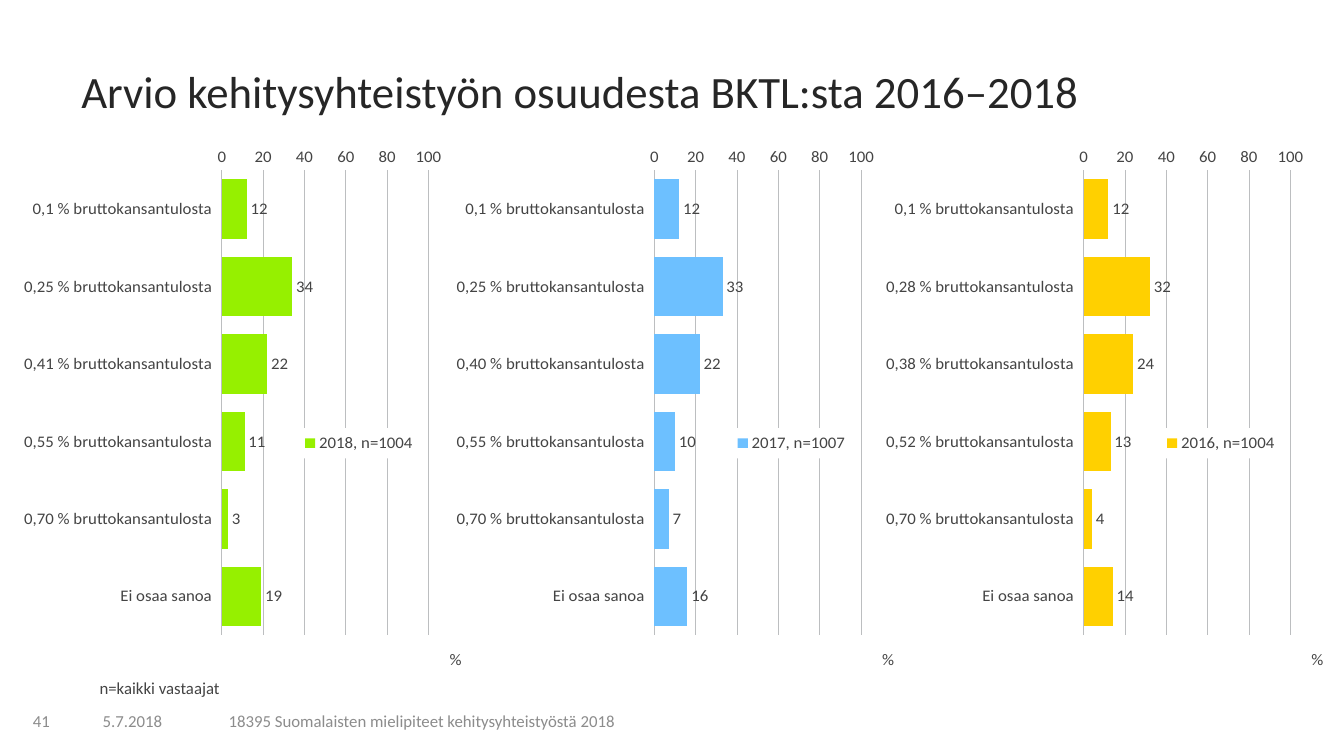
from lxml import etree
from pptx import Presentation
from pptx import util as u
from pptx.chart import data as cd
from pptx.dml import color as dc
from pptx.enum import chart as ec
from pptx.enum import text as et
from pptx.oxml import ns

FONT = "Calibri"
HUES = {
    "head": "262626", "body": "444444", "foot": "8C8C8C", "grid": "BCBEC0",
    "back": "FFFFFF", "lime": "96F000", "blue": "6DC0FF", "gold": "FFD000",
}
TAIL = " % bruttokansantulosta"
LAST = "Ei osaa sanoa"
PANELS = [
    (0.38, "2018, n=1004", "lime", ["0,1", "0,25", "0,41", "0,55", "0,70"],
     [12, 34, 22, 11, 3, 19]),
    (11.28, "2017, n=1007", "blue", ["0,1", "0,25", "0,40", "0,55", "0,70"],
     [12, 33, 22, 10, 7, 16]),
    (22.1, "2016, n=1004", "gold", ["0,1", "0,28", "0,38", "0,52", "0,70"],
     [12, 32, 24, 13, 4, 14]),
]
FOOTS = [
    (0.58, 1.12, "41"),
    (2.34, 2.57, "5.7.2018"),
    (5.51, 11.58, "18395 Suomalaisten mielipiteet kehitysyhteistyöstä 2018"),
]


def tint(name):
    return dc.RGBColor.from_string(HUES[name])


def style(font, size, hue):
    font.name = FONT
    font.size = u.Pt(size)
    font.bold = False
    font.color.rgb = tint(hue)


def label(slide, box, words, size, hue, anchor=et.MSO_ANCHOR.TOP, space=1.0):
    frame = slide.shapes.add_textbox(*map(u.Cm, box)).text_frame
    frame.word_wrap = True
    frame.vertical_anchor = anchor
    para = frame.paragraphs[0]
    para.line_spacing = space
    run = para.add_run()
    run.text = words
    style(run.font, size, hue)


def place(part, index, **spots):
    for old in part.findall(ns.qn("c:layout")):
        part.remove(old)
    layout = etree.Element(ns.qn("c:layout"))
    manual = etree.SubElement(layout, ns.qn("c:manualLayout"))
    for key, value in spots.items():
        etree.SubElement(manual, ns.qn("c:" + key)).set("val", str(value))
    part.insert(index, layout)


def scale(chart):
    cat, val = chart.category_axis, chart.value_axis
    for axis in (cat, val):
        axis.major_tick_mark = axis.minor_tick_mark = ec.XL_TICK_MARK.NONE
        axis.format.line.fill.background()
        style(axis.tick_labels.font, 12, "body")
    cat.reverse_order = True
    cat.crosses = ec.XL_AXIS_CROSSES.MAXIMUM
    cat.tick_label_position = ec.XL_TICK_LABEL_POSITION.LOW
    cat.has_major_gridlines = False
    val.minimum_scale, val.maximum_scale, val.major_unit = 0, 100, 20
    val.tick_labels.number_format = "General"
    val.tick_labels.number_format_is_linked = False
    val.has_major_gridlines = True
    line = val.major_gridlines.format.line
    line.color.rgb = tint("grid")
    line.width = u.Pt(0.5)
    title = val.axis_title
    run = title.text_frame.paragraphs[0].add_run()
    run.text = "%"
    style(run.font, 12, "body")
    place(title._element, 1, xMode="edge", yMode="edge", x=0.96, y=0.95)


def legend(chart):
    chart.has_legend = True
    key = chart.legend
    key.position = ec.XL_LEGEND_POSITION.RIGHT
    key.include_in_layout = False
    style(key.font, 12, "body")
    place(key._element, 1, xMode="edge", yMode="edge",
          x=0.63, y=0.52, w=0.27, h=0.06)
    props = etree.Element(ns.qn("c:spPr"))
    fill = etree.SubElement(props, ns.qn("a:solidFill"))
    etree.SubElement(fill, ns.qn("a:srgbClr")).set("val", HUES["back"])
    key._element.find(ns.qn("c:overlay")).addnext(props)


def panel(slide, box, name, hue, rates, values):
    data = cd.CategoryChartData(number_format="#,##0")
    data.categories = [rate + TAIL for rate in rates] + [LAST]
    data.add_series(name, values)
    chart = slide.shapes.add_chart(
        ec.XL_CHART_TYPE.BAR_CLUSTERED, *map(u.Cm, box), data).chart
    chart.has_title = False
    chart.font.name = FONT
    chart.font.size = u.Pt(12)
    scale(chart)
    legend(chart)
    plot = chart.plots[0]
    plot.gap_width = 30
    plot.vary_by_categories = False
    fill = plot.series[0].format.fill
    fill.solid()
    fill.fore_color.rgb = tint(hue)
    plot.has_data_labels = True
    marks = plot.data_labels
    marks.show_value = True
    marks.position = ec.XL_LABEL_POSITION.OUTSIDE_END
    marks.number_format = "#,##0"
    marks.number_format_is_linked = False
    style(marks.font, 12, "body")
    area = chart._chartSpace.find(".//" + ns.qn("c:plotArea"))
    place(area, 0, layoutTarget="inner", xMode="edge", yMode="edge",
          x=0.46, y=0.01, w=0.46, h=0.92)


def footer(slide, top, height):
    for left, width, words in FOOTS:
        label(slide, (left, top, width, height), words, 12, "foot",
              et.MSO_ANCHOR.MIDDLE)


def main():
    deck = Presentation()
    deck.slide_width, deck.slide_height = u.Cm(33.87), u.Cm(19.05)
    slide = deck.slides.add_slide(deck.slide_layouts[6])
    footer(slide, 17.65, 1.02)
    label(slide, (1.8, 1.63, 30.66, 1.73),
          "Arvio kehitysyhteistyön osuudesta BKTL:sta 2016–2018",
          32, "head", space=0.9)
    label(slide, (2.26, 17.02, 23.32, 0.71), "n=kaikki vastaajat",
          12, "body", space=0.9)
    for left, *rest in PANELS:
        panel(slide, (left, 3.71, 11.33, 13.28), *rest)
    deck.save("out.pptx")


if __name__ == "__main__":
    main()
